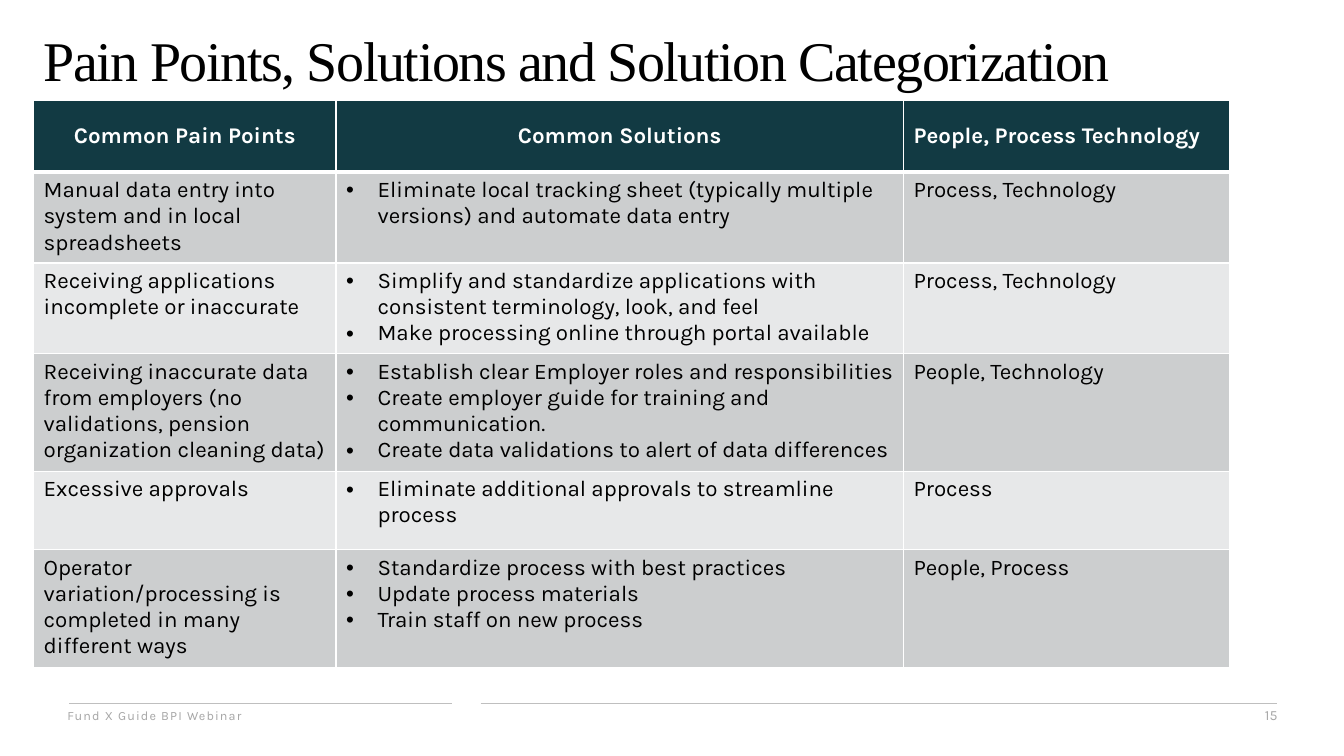
from lxml import etree
from pptx import Presentation
from pptx.dml.color import RGBColor
from pptx.enum.shapes import MSO_CONNECTOR
from pptx.enum.text import MSO_ANCHOR, PP_ALIGN
from pptx.oxml.ns import qn
from pptx.util import Pt

LINE = MSO_CONNECTOR.STRAIGHT
TOP, MIDDLE = MSO_ANCHOR.TOP, MSO_ANCHOR.MIDDLE
LEFT, CENTER, RIGHT = PP_ALIGN.LEFT, PP_ALIGN.CENTER, PP_ALIGN.RIGHT
BLACK = RGBColor(0, 0, 0)
WHITE = RGBColor(255, 255, 255)
TEAL = RGBColor(0x12, 0x3A, 0x43)
DARK = RGBColor(0xCC, 0xCE, 0xCF)
LIGHT = RGBColor(0xE7, 0xE8, 0xE9)
GRAY = RGBColor(0xA6, 0xA6, 0xA6)
RULE = RGBColor(0xBF, 0xBF, 0xBF)
SANS, SERIF = "Karla", "Times New Roman"

WIDTHS = [216, 405.4, 232.6]
HEIGHTS = [51, 62, 62, 81, 56, 81]
HEADS = ["Common Pain Points", "Common Solutions", "People, Process Technology"]
ROWS = [
    ("Manual data entry into system and in local spreadsheets",
     ["Eliminate local tracking sheet (typically multiple versions) and automate data entry"],
     "Process, Technology"),
    ("Receiving applications incomplete or inaccurate",
     ["Simplify and standardize applications with consistent terminology, look, and feel",
      "Make processing online through portal available"],
     "Process, Technology"),
    ("Receiving inaccurate data from employers (no validations, pension organization cleaning data)",
     ["Establish clear Employer roles and responsibilities",
      "Create employer guide for training and communication.",
      "Create data validations to alert of data differences"],
     "People, Technology"),
    ("Excessive approvals",
     ["Eliminate additional approvals to streamline process"],
     "Process"),
    ("Operator variation/processing is completed in many different ways",
     ["Standardize process with best practices",
      "Update process materials",
      "Train staff on new process"],
     "People, Process"),
]


def style(para, size, color, name=SANS, bold=False, align=LEFT):
    para.alignment = align
    font = para.font
    font.name, font.size, font.bold = name, Pt(size), bold
    font.color.rgb = color


def add_text(slide, box, text, size, color, name=SANS, align=LEFT, anchor=MIDDLE, space=0):
    frame = slide.shapes.add_textbox(*map(Pt, box)).text_frame
    frame.word_wrap = True
    frame.vertical_anchor = anchor
    para = frame.paragraphs[0]
    run = para.add_run()
    run.text = text
    run._r.get_or_add_rPr().set("spc", str(space))
    style(para, size, color, name, align=align)
    return para


def add_title(slide, box):
    para = add_text(slide, box, "Pain Points, Solutions and Solution Categorization",
                    40, BLACK, SERIF, anchor=TOP, space=-100)
    para.line_spacing = 0.8


def add_bullet(para):
    props = para._p.get_or_add_pPr()
    props.set("marL", str(Pt(22.5)))
    props.set("indent", str(-Pt(22.5)))
    etree.SubElement(props, qn("a:buFont"), typeface="Arial")
    etree.SubElement(props, qn("a:buChar"), char="•")


def add_edges(cell, top, bottom):
    props = cell._tc.get_or_add_tcPr()
    for side, width in (("L", 1), ("R", 1), ("T", top), ("B", bottom)):
        edge = etree.SubElement(props, qn("a:ln" + side), w=str(Pt(width)))
        fill = etree.SubElement(edge, qn("a:solidFill"))
        etree.SubElement(fill, qn("a:srgbClr"), val=str(WHITE))


def fill_cell(cell, lines, row, col):
    head = row == 0
    add_edges(cell, 3 if row == 1 else 1, 3 if head else 1)
    cell.fill.solid()
    cell.fill.fore_color.rgb = TEAL if head else DARK if row % 2 else LIGHT
    cell.vertical_anchor = MIDDLE if head else TOP
    frame = cell.text_frame
    frame.text = "\n".join(lines)
    for para in frame.paragraphs:
        if col == 1 and not head:
            add_bullet(para)
        style(para, 16, WHITE if head else BLACK, bold=head,
              align=CENTER if head and col < 2 else LEFT)


def add_grid(slide, left, top):
    box = map(Pt, (left, top, sum(WIDTHS), sum(HEIGHTS)))
    table = slide.shapes.add_table(len(HEIGHTS), len(WIDTHS), *box).table
    for column, width in zip(table.columns, WIDTHS):
        column.width = Pt(width)
    for row, height in zip(table.rows, HEIGHTS):
        row.height = Pt(height)
    for i, texts in enumerate([HEADS, *ROWS]):
        for j, text in enumerate(texts):
            lines = text if isinstance(text, list) else [text]
            fill_cell(table.cell(i, j), lines, i, j)


def add_rule(slide, start, end, y):
    rule = slide.shapes.add_connector(LINE, Pt(start), Pt(y), Pt(end), Pt(y))
    rule.line.color.rgb = RULE
    rule.line.width = Pt(0.5)
    etree.SubElement(rule._element.spPr, qn("a:effectLst"))


def add_footer(slide, left, top, width):
    right = left + width
    add_rule(slide, left + 8.6, left + 282.2, top + 0.5)
    add_rule(slide, left + 302.4, right - 7.2, top + 0.5)
    add_text(slide, (left, top, 300, 18), "Fund X Guide BPI Webinar", 9, GRAY, space=80)
    add_text(slide, (right - 216, top, 216, 18), "15", 10, GRAY, align=RIGHT)


def main():
    deck = Presentation()
    deck.slide_width, deck.slide_height = Pt(960), Pt(540)
    slide = deck.slides.add_slide(deck.slide_layouts[6])
    add_title(slide, (24, 24, 834.5, 46))
    add_grid(slide, 24, 72)
    add_footer(slide, 41, 502, 878.5)
    deck.save("out.pptx")


if __name__ == "__main__":
    main()
